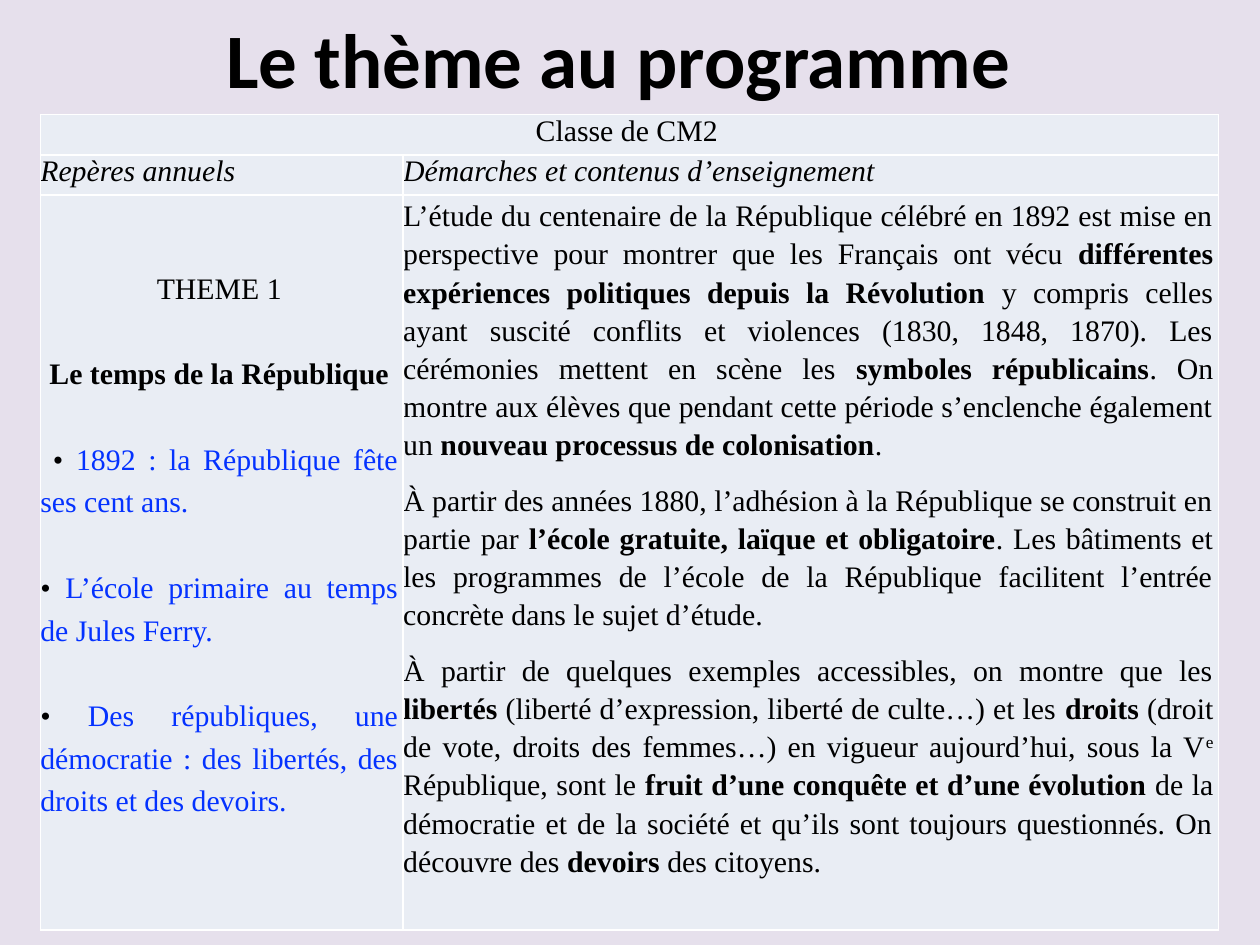
from lxml import etree
from pptx import Presentation, util as u
from pptx.dml.color import RGBColor
from pptx.enum import text
from pptx.oxml.ns import qn

# Content: each paragraph is a list of (wording, style) spans
TITLE = "Le thème au programme"
CLASS_NAME = "Classe de CM2"
HEADINGS = ["Repères annuels", "Démarches et contenus d’enseignement"]
THEME_LINES = [[("THEME 1", "plain")], [("Le temps de la République", "bold")]]
TOPICS = [
    [(" • ", "plain"), ("1892 : la République fête ses cent ans.", "topic")],
    [("• ", "plain"), ("L’école primaire au temps de Jules Ferry.", "topic")],
    [("• ", "plain"),
     ("Des républiques, une démocratie : des libertés, des droits et des devoirs.", "topic")],
]
APPROACH = [
    [("L’étude du centenaire de la République célébré en 1892 est mise en perspective "
      "pour montrer que les Français ont vécu ", "plain"),
     ("différentes expériences politiques depuis la Révolution", "bold"),
     (" y compris celles ayant suscité conflits et violences (1830, 1848, 1870). "
      "Les cérémonies mettent en scène les ", "plain"),
     ("symboles républicains", "bold"),
     (". On montre aux élèves que pendant cette période s’enclenche également un ", "plain"),
     ("nouveau processus de colonisation", "bold"), (".", "plain")],
    [("À partir des années 1880, l’adhésion à la République se construit en partie par ", "plain"),
     ("l’école gratuite, laïque et obligatoire", "bold"),
     (". Les bâtiments et les programmes de l’école de la République facilitent "
      "l’entrée concrète dans le sujet d’étude.", "plain")],
    [("À partir de quelques exemples accessibles, on montre que les ", "plain"),
     ("libertés", "bold"),
     (" (liberté d’expression, liberté de culte…) et les ", "plain"),
     ("droits", "bold"),
     (" (droit de vote, droits des femmes…) en vigueur aujourd’hui, sous la V", "plain"),
     ("e", "superscript"), (" République, sont le ", "plain"),
     ("fruit d’une conquête et d’une évolution ", "bold"),
     ("de la démocratie et de la société et qu’ils sont toujours questionnés. "
      "On découvre des ", "plain"),
     ("devoirs", "bold"), (" des citoyens.", "plain")],
]

THEME = {
    "background": "E6E0EC", "cell": "E9EDF4", "border": "FFFFFF",
    "ink": "000000", "topic": "0432FF",
    "title_font": "Calibri", "title_size": 44,
    "body_font": "Times New Roman", "body_size": 17,
    "line": 24.4,
}
COLUMNS = [2.88, 6.47]
ROWS = [0.32, 0.32, 5.83]
TABLE_LEFT, TABLE_TOP = 0.32, 0.91
ALIGN = text.PP_ALIGN


def color(name):
    return RGBColor.from_string(THEME[name])


def set_font(font, kind):
    font.name = THEME[kind + "_font"]
    font.size = u.Pt(THEME[kind + "_size"])
    font.color.rgb = color("ink")


def write(frame, paragraphs, align, spacing=None, before=(), after=0, italic=False):
    """Fill a cell; before gives the space above each paragraph."""
    for index, spans in enumerate(paragraphs):
        para = frame.paragraphs[0] if index == 0 else frame.add_paragraph()
        para.alignment = align[index] if isinstance(align, list) else align
        para.line_spacing = spacing
        para.space_before = u.Pt(before[index] if before else 0)
        para.space_after = u.Pt(after)
        set_font(para.font, "body")
        for wording, style in spans:
            span = para.add_run()
            span.text = wording
            set_font(span.font, "body")
            span.font.italic = italic
            span.font.bold = style == "bold"
            if style == "topic":
                span.font.color.rgb = color("topic")
            if style == "superscript":
                span.font._element.set("baseline", "30000")


def style_cell(cell):
    cell.margin_left = cell.margin_top = cell.margin_bottom = 0
    cell.margin_right = u.Inches(0.04)
    properties = cell._tc.get_or_add_tcPr()
    for side in ("a:lnL", "a:lnR", "a:lnT", "a:lnB"):
        line = etree.SubElement(properties, qn(side), w=str(u.Pt(1)))
        fill = etree.SubElement(line, qn("a:solidFill"))
        etree.SubElement(fill, qn("a:srgbClr"), val=THEME["border"])
    cell.fill.solid()
    cell.fill.fore_color.rgb = color("cell")


def main():
    deck = Presentation()
    deck.slide_width, deck.slide_height = u.Inches(10), u.Inches(7.5)
    page = deck.slides.add_slide(deck.slide_layouts[6])
    page.background.fill.solid()
    page.background.fill.fore_color.rgb = color("background")

    # Title
    box = page.shapes.add_textbox(u.Inches(0.41), 0, u.Inches(9), u.Inches(TABLE_TOP))
    box.text_frame.word_wrap = True
    box.text_frame.vertical_anchor = text.MSO_ANCHOR.MIDDLE
    para = box.text_frame.paragraphs[0]
    para.text = TITLE
    para.alignment = ALIGN.CENTER
    set_font(para.font, "title")
    para.font.bold = True

    # Table grid
    table = page.shapes.add_table(
        len(ROWS), len(COLUMNS), u.Inches(TABLE_LEFT), u.Inches(TABLE_TOP),
        u.Inches(sum(COLUMNS)), u.Inches(sum(ROWS))).table
    table.first_row = table.horz_banding = False
    for column, width in zip(table.columns, COLUMNS):
        column.width = u.Inches(width)
    for row, height in zip(table.rows, ROWS):
        row.height = u.Inches(height)
    for cell in table.iter_cells():
        style_cell(cell)
    table.cell(0, 0).merge(table.cell(0, 1))

    # Heading rows
    write(table.cell(0, 0).text_frame, [[(CLASS_NAME, "plain")]], ALIGN.CENTER)
    for index, heading in enumerate(HEADINGS):
        write(table.cell(1, index).text_frame, [[(heading, "plain")]], ALIGN.LEFT, italic=True)

    # Theme and topics, one empty line's height apart
    lines = THEME_LINES + TOPICS
    topics_cell = table.cell(2, 0)
    topics_cell.margin_top = u.Inches(0.54)
    write(topics_cell.text_frame, lines,
          [ALIGN.CENTER] * len(THEME_LINES) + [ALIGN.JUSTIFY] * len(TOPICS),
          u.Pt(THEME["line"]), [0] + [THEME["line"]] * (len(lines) - 1))

    # Approach and content
    write(table.cell(2, 1).text_frame, APPROACH, ALIGN.JUSTIFY, 1.15, after=10)

    deck.save("out.pptx")


if __name__ == "__main__":
    main()
